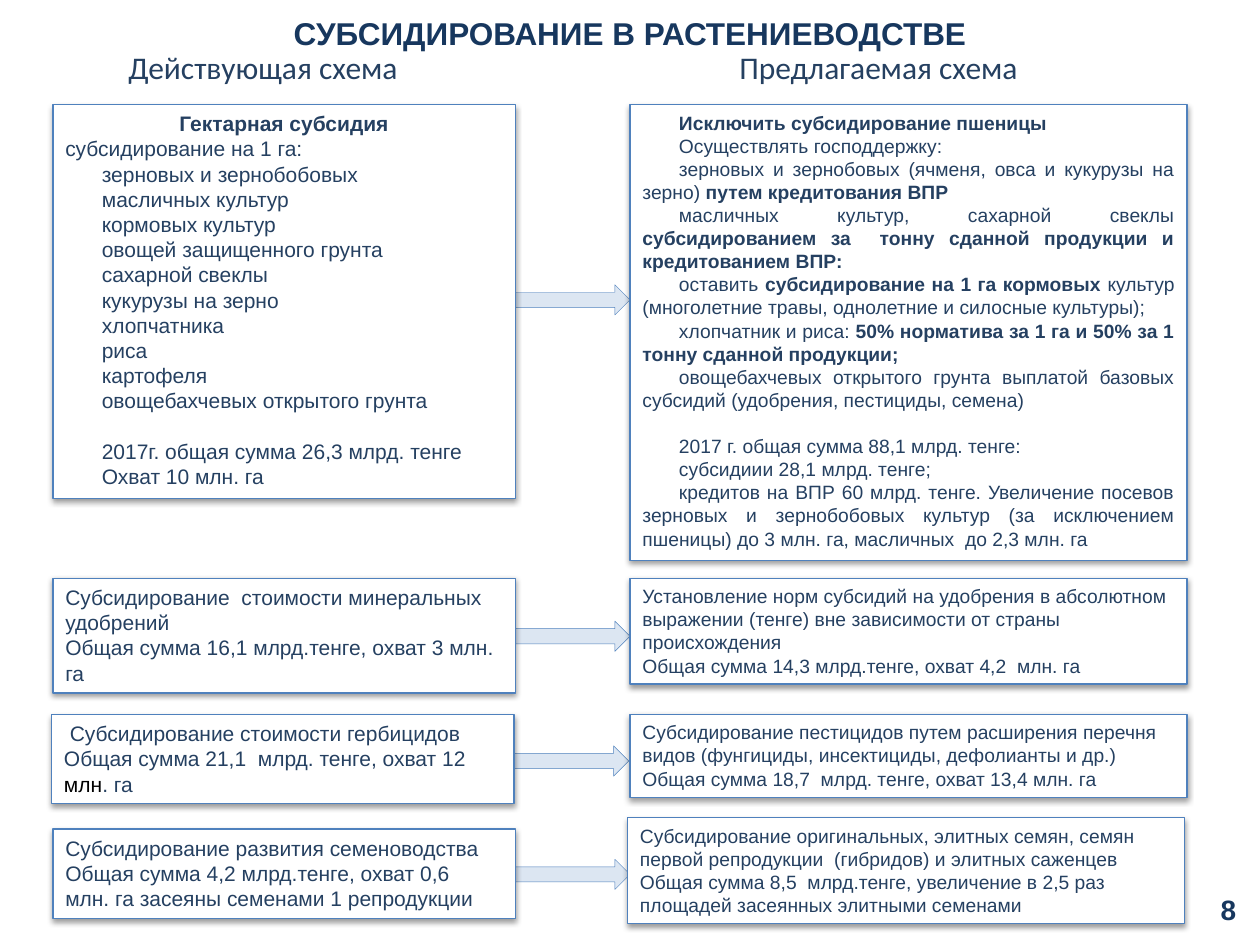
import pptx
import pptx.util
import pptx.dml.color
import pptx.enum.shapes
import pptx.enum.text
import pptx.oxml
import pptx.oxml.ns

Inches = pptx.util.Inches
Pt = pptx.util.Pt
ALIGN = pptx.enum.text.PP_ALIGN
SHAPE = pptx.enum.shapes.MSO_SHAPE

COLORS = {"title": "17375E", "text": "254061", "black": "000000",
          "border": "4F81BD", "arrow": "DCE6F2", "white": "FFFFFF"}

BOX_WIDTHS = {"current": 3.67, "proposed": 4.42}
BOX_SIZES = {"current": 12, "proposed": 11}
ARROW_WIDTH, ARROW_HEIGHT = 0.91, 0.24

HECTARE_CURRENT = [
    ("center", ["*Гектарная субсидия"]),
    ("left", ["субсидирование на 1 га:"]),
    *[("indent", [crop]) for crop in (
        "зерновых и зернобобовых", "масличных культур", "кормовых культур",
        "овощей защищенного грунта", "сахарной свеклы", "кукурузы на зерно",
        "хлопчатника", "риса", "картофеля", "овощебахчевых открытого грунта")],
    ("gap", ["2017г. общая сумма 26,3 млрд. тенге"]),
    ("indent", ["Охват 10 млн. га"]),
]
HECTARE_PROPOSED = [
    ("indent", ["*Исключить субсидирование пшеницы"]),
    ("indent", ["Осуществлять господдержку:"]),
    ("indent", ["зерновых и зернобовых (ячменя, овса и кукурузы на зерно) ",
                "*путем кредитования ВПР"]),
    ("indent", ["масличных культур, сахарной свеклы ",
                "*субсидированием за  тонну сданной продукции и кредитованием ВПР:"]),
    ("indent", ["оставить ", "*субсидирование на 1 га кормовых ",
                "культур (многолетние травы, однолетние и силосные культуры);"]),
    ("indent", ["хлопчатник и риса: ",
                "*50% норматива за 1 га и 50% за 1 тонну сданной продукции;"]),
    ("indent", ["овощебахчевых открытого грунта выплатой базовых субсидий "
                "(удобрения, пестициды, семена)"]),
    ("gap", ["2017 г. общая сумма 88,1 млрд. тенге:"]),
    ("indent", ["субсидиии 28,1 млрд. тенге;"]),
    ("indent", ["кредитов на ВПР 60 млрд. тенге. Увеличение посевов зерновых и "
                "зернобобовых культур (за исключением пшеницы) до 3 млн. га, "
                "масличных  до 2,3 млн. га"]),
]
FERTILIZER_CURRENT = [
    ("left", ["Субсидирование  стоимости минеральных удобрений"]),
    ("left", ["Общая сумма 16,1 млрд.тенге, охват 3 млн. га"]),
]
FERTILIZER_PROPOSED = [
    ("left", ["Установление норм субсидий на удобрения в абсолютном выражении "
              "(тенге) вне зависимости от страны происхождения"]),
    ("left", ["Общая сумма 14,3 млрд.тенге, охват 4,2  млн. га"]),
]
HERBICIDE_CURRENT = [
    ("left", [" Субсидирование стоимости гербицидов"]),
    ("left", ["Общая сумма 21,1  млрд. тенге, охват 12 ", "~млн", ". га"]),
]
PESTICIDE_PROPOSED = [
    ("left", ["Субсидирование пестицидов путем расширения перечня видов "
              "(фунгициды, инсектициды, дефолианты и др.)"]),
    ("left", ["Общая сумма 18,7  млрд. тенге, охват 13,4 млн. га"]),
]
SEED_CURRENT = [
    ("left", ["Субсидирование развития семеноводства"]),
    ("left", ["Общая сумма 4,2 млрд.тенге, охват 0,6  млн. га засеяны семенами "
              "1 репродукции"]),
]
SEED_PROPOSED = [
    ("left", ["Субсидирование оригинальных, элитных семян, семян первой "
              "репродукции  (гибридов) и элитных саженцев"]),
    ("left", ["Общая сумма 8,5  млрд.тенге, увеличение в 2,5 раз площадей "
              "засеянных элитными семенами"]),
]

ROWS = [
    ((0.42, 0.83, 3.13, HECTARE_CURRENT), (5, 0.83, 3.62, HECTARE_PROPOSED), 2.26),
    ((0.42, 4.59, 0.91, FERTILIZER_CURRENT), (5, 4.59, 0.84, FERTILIZER_PROPOSED), 4.93),
    ((0.41, 5.67, 0.71, HERBICIDE_CURRENT), (5, 5.67, 0.66, PESTICIDE_PROPOSED), 5.92),
    ((0.42, 6.58, 0.71, SEED_CURRENT), (4.98, 6.49, 0.84, SEED_PROPOSED), 6.82),
]


def rgb(name):
    """Return the named colour."""
    return pptx.dml.color.RGBColor.from_string(COLORS[name])


def style_span(span, size, color="text", bold=False, font="Arial"):
    """Format one run of text."""
    span.font.name = font
    span.font.size = Pt(size)
    span.font.bold = bold
    span.font.color.rgb = rgb(color)


def add_shape(slide, kind, bounds, fill, line_width):
    """Add a filled preset shape with a border and no inherited shadow."""
    shape = slide.shapes.add_shape(kind, *map(Inches, bounds))
    shape.shadow.inherit = False
    shape.fill.solid()
    shape.fill.fore_color.rgb = rgb(fill)
    shape.line.color.rgb = rgb("border")
    shape.line.width = Pt(line_width)
    return shape


def add_shadow(shape):
    """Give a shape a soft shadow straight below it."""
    effects = shape.element.spPr.find(pptx.oxml.ns.qn("a:effectLst"))
    effects.append(pptx.oxml.parse_xml(
        f'<a:outerShdw {pptx.oxml.ns.nsdecls("a")} blurRad="40000" dist="20000" '
        'dir="5400000" rotWithShape="0"><a:srgbClr val="000000">'
        '<a:alpha val="38000"/></a:srgbClr></a:outerShdw>'))


def fill_paragraph(para, layout, parts, size):
    """Write parts into a paragraph; * marks bold and ~ marks black."""
    para.alignment = {"center": ALIGN.CENTER, "left": ALIGN.LEFT}.get(layout, ALIGN.JUSTIFY)
    if layout in ("indent", "gap"):
        properties = para._p.get_or_add_pPr()
        properties.set("marL", "0")
        properties.set("indent", str(Inches(0.29)))
    if layout == "gap":
        para.space_before = Pt(size * 1.2)
    for part in parts:
        span = para.add_run()
        span.text = part.lstrip("*~")
        style_span(span, size, "black" if part.startswith("~") else "text",
                   part.startswith("*"))


def add_scheme_box(slide, scheme, left, top, height, paragraphs):
    """Draw one bordered text box of a scheme."""
    bounds = (left, top, BOX_WIDTHS[scheme], height)
    box = add_shape(slide, SHAPE.RECTANGLE, bounds, "white", 0.75)
    add_shadow(box)
    frame = box.text_frame
    frame.word_wrap = True
    frame.vertical_anchor = pptx.enum.text.MSO_ANCHOR.TOP
    for index, (layout, parts) in enumerate(paragraphs):
        para = frame.add_paragraph() if index else frame.paragraphs[0]
        fill_paragraph(para, layout, parts, BOX_SIZES[scheme])


def add_row(slide, current, proposed, arrow_top):
    """Draw a current box, an arrow and the proposed box."""
    arrow_left = current[0] + BOX_WIDTHS["current"]
    add_shape(slide, SHAPE.RIGHT_ARROW,
              (arrow_left, arrow_top, ARROW_WIDTH, ARROW_HEIGHT), "arrow", 0.25)
    add_scheme_box(slide, "current", *current)
    add_scheme_box(slide, "proposed", *proposed)


def add_label(slide, bounds, text, align, size, color, bold=False, font="Arial"):
    """Add a single line of text."""
    box = slide.shapes.add_textbox(*map(Inches, bounds))
    frame = box.text_frame
    frame.word_wrap = True
    frame.text = text
    para = frame.paragraphs[0]
    para.alignment = align
    style_span(para.runs[0], size, color, bold, font)
    return box


def add_headings(slide):
    """Place the title, the two scheme headings and the page number."""
    add_label(slide, (0, 0.06, 10, 0.4), "СУБСИДИРОВАНИЕ В РАСТЕНИЕВОДСТВЕ",
              ALIGN.CENTER, 18, "title", True)
    for left, width, text in ((0.92, 2.67, "Действующая схема"),
                              (5.77, 2.87, "Предлагаемая схема")):
        add_label(slide, (left, 0.33, width, 0.4), text, ALIGN.LEFT, 18, "text",
                  font="Calibri")
    number = add_label(slide, (7.58, 7.02, 2.33, 0.4), "8", ALIGN.RIGHT, 16, "title", True)
    number.text_frame.vertical_anchor = pptx.enum.text.MSO_ANCHOR.MIDDLE


def main():
    """Build and save the slide."""
    deck = pptx.Presentation()
    deck.slide_width, deck.slide_height = Inches(10), Inches(7.5)
    page = deck.slides.add_slide(deck.slide_layouts[6])
    add_headings(page)
    for row in ROWS:
        add_row(page, *row)
    deck.save("out.pptx")


if __name__ == "__main__":
    main()
